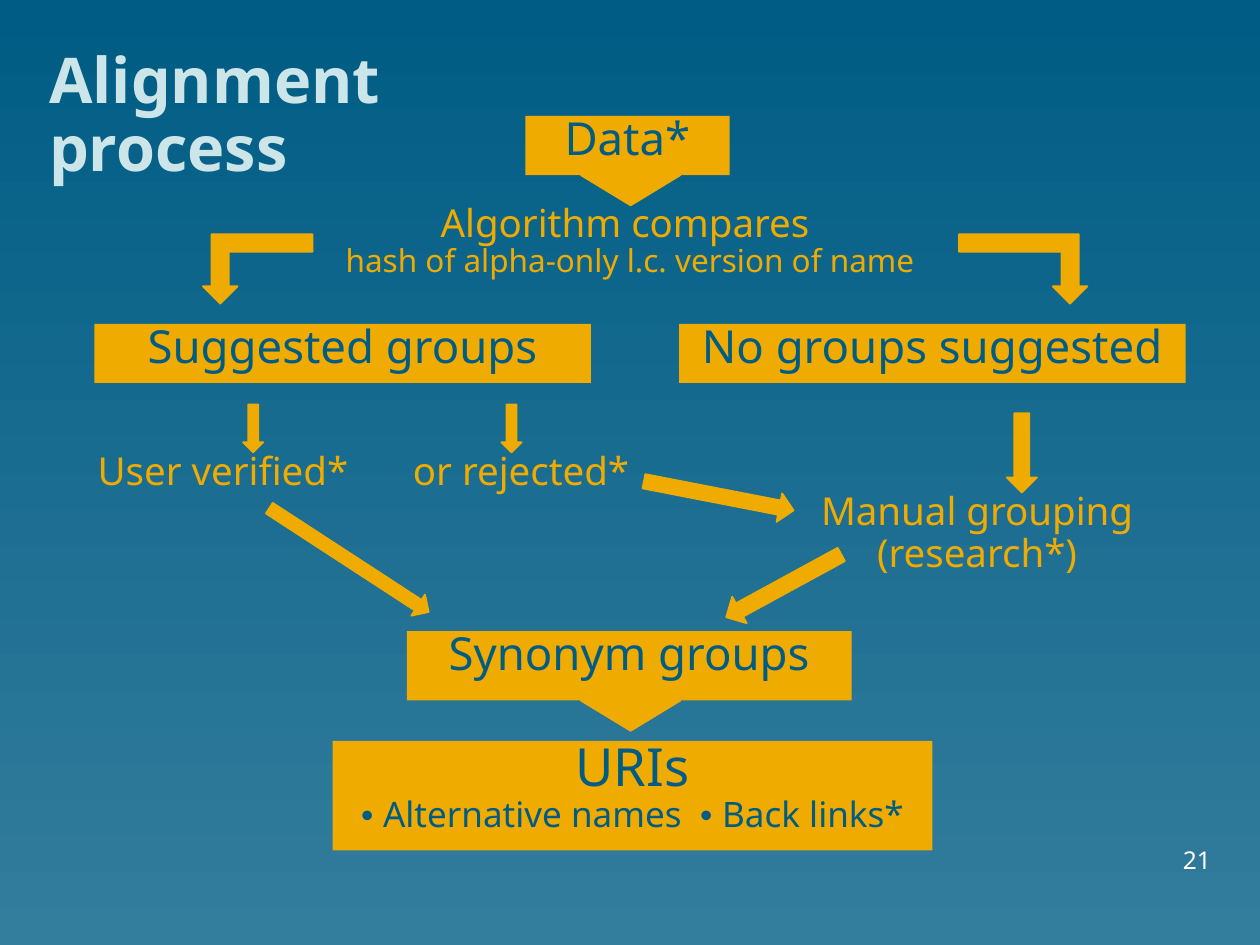
from dataclasses import dataclass

import pptx
import pptx.dml.color
import pptx.enum.shapes
import pptx.enum.text
import pptx.util

Inches = pptx.util.Inches
SHAPE = pptx.enum.shapes.MSO_SHAPE
ALIGN = pptx.enum.text.PP_ALIGN
ANCHOR = pptx.enum.text.MSO_ANCHOR

COLORS = {
    "deep": "005C84",
    "light": "337D9D",
    "gold": "F0AB00",
    "pale": "CCE5E9",
    "white": "FFFFFF",
}


@dataclass
class Box:
    left: float
    top: float
    width: float
    height: float


@dataclass
class Run:
    text: str
    size: float
    font: str = "Noto Sans"


@dataclass
class Label:
    box: Box
    lines: list[list[Run]]
    filled: bool = False


@dataclass
class Arrow:
    kind: int
    box: Box
    turn: float = 0
    flip: bool = False


def rgb(name: str) -> pptx.dml.color.RGBColor:
    return pptx.dml.color.RGBColor.from_string(COLORS[name])


def place(slide, kind: int, box: Box):
    """Add a flat gold shape without an outline."""
    shape = slide.shapes.add_shape(
        kind, Inches(box.left), Inches(box.top), Inches(box.width), Inches(box.height)
    )
    shape.shadow.inherit = False
    shape.fill.solid()
    shape.fill.fore_color.rgb = rgb("gold")
    shape.line.fill.background()
    return shape


def write(shape, lines: list[list[Run]], *, color: str, bold: bool = False,
          align=ALIGN.CENTER, anchor=ANCHOR.TOP) -> None:
    """Fill a shape with one paragraph, with a line break between lines."""
    frame = shape.text_frame
    frame.word_wrap = True
    frame.vertical_anchor = anchor
    frame.margin_left = frame.margin_right = 0
    frame.margin_top = frame.margin_bottom = 0
    para = frame.paragraphs[0]
    para.alignment = align
    para.line_spacing = 0.9
    for index, line in enumerate(lines):
        if index:
            para.add_line_break()
        for part in line:
            run = para.add_run()
            run.text = part.text
            run.font.name = part.font
            run.font.size = pptx.util.Pt(part.size)
            run.font.bold = bold
            run.font.color.rgb = rgb(color)


def add_text(slide, box: Box, lines: list[list[Run]], **style) -> None:
    shape = slide.shapes.add_textbox(
        Inches(box.left), Inches(box.top), Inches(box.width), Inches(box.height)
    )
    write(shape, lines, **style)


def add_label(slide, label: Label) -> None:
    if label.filled:
        write(place(slide, SHAPE.RECTANGLE, label.box), label.lines, color="deep")
    else:
        add_text(slide, label.box, label.lines, color="gold")


def add_arrow(slide, arrow: Arrow) -> None:
    shape = place(slide, arrow.kind, arrow.box)
    shape.line.color.rgb = rgb("gold")
    shape.line.width = pptx.util.Pt(1)
    shape.rotation = arrow.turn
    if arrow.flip:
        shape._element.spPr.xfrm.set("flipH", "1")


def bar(text: str, box: Box) -> Label:
    return Label(box, [[Run(text, 26)]], filled=True)


def note(text: str, box: Box) -> Label:
    return Label(box, [[Run(text, 22)]])


LABELS = [
    bar("Data*", Box(4.17, 0.92, 1.62, 0.47)),
    bar("Suggested groups", Box(0.75, 2.57, 3.94, 0.47)),
    Label(
        Box(2.01, 1.62, 5.98, 0.94),
        [[Run("Algorithm compares ", 22)],
         [Run("hash of alpha-only l.c. version of name", 18)]],
    ),
    bar("No groups suggested", Box(5.39, 2.57, 4.02, 0.47)),
    note("User verified*", Box(0.67, 3.59, 2.2, 0.55)),
    note("or rejected*", Box(3.19, 3.59, 1.89, 0.55)),
    bar("Synonym groups", Box(3.23, 5.01, 3.53, 0.55)),
    note("Manual grouping (research*)", Box(6.34, 3.91, 2.83, 0.87)),
    Label(
        Box(2.64, 5.88, 4.76, 0.87),
        [[Run("URIs", 30)],
         [Run("• ", 20, "Arial"), Run("Alternative names  ", 20),
          Run("• ", 20, "Arial"), Run("Back links*", 20)]],
        filled=True,
    ),
]

BENT, TIP, DOWN = SHAPE.BENT_UP_ARROW, SHAPE.ISOSCELES_TRIANGLE, SHAPE.DOWN_ARROW
ARROWS = [
    Arrow(BENT, Box(1.61, 1.86, 0.87, 0.55), 180),
    Arrow(TIP, Box(4.61, 1.39, 0.79, 0.24), 180),
    Arrow(TIP, Box(4.61, 5.56, 0.79, 0.24), 180),
    Arrow(BENT, Box(7.61, 1.86, 1.02, 0.55), 180, flip=True),
    Arrow(DOWN, Box(2.67, 3.69, 0.2, 1.51), 303.1),
    Arrow(DOWN, Box(7.99, 3.28, 0.24, 0.63)),
    Arrow(DOWN, Box(3.98, 3.21, 0.16, 0.38)),
    Arrow(DOWN, Box(1.93, 3.21, 0.16, 0.38)),
    Arrow(DOWN, Box(5.59, 3.33, 0.23, 1.21), 281),
    Arrow(DOWN, Box(6.1, 4.13, 0.24, 1.04), 61.4),
]


def paint(slide) -> None:
    """Shade the background from deep at the top to light at the bottom."""
    fill = slide.background.fill
    fill.gradient()
    fill.gradient_angle = 270
    for stop, name in zip(fill.gradient_stops, ("deep", "light")):
        stop.color.rgb = rgb(name)


def main() -> None:
    deck = pptx.Presentation()
    deck.slide_width, deck.slide_height = Inches(10), Inches(7.5)
    slide = deck.slides.add_slide(deck.slide_layouts[6])
    paint(slide)
    add_text(slide, Box(0.39, 0, 9.22, 1.47),
             [[Run("Alignment ", 36)], [Run("process", 36)]],
             color="pale", bold=True, align=ALIGN.LEFT, anchor=ANCHOR.BOTTOM)
    add_text(slide, Box(7.52, 6.74, 2.09, 0.2), [[Run("21", 14)]],
             color="white", align=ALIGN.RIGHT, anchor=ANCHOR.BOTTOM)
    for label in LABELS:
        add_label(slide, label)
    for arrow in ARROWS:
        add_arrow(slide, arrow)
    deck.save("out.pptx")


if __name__ == "__main__":
    main()
